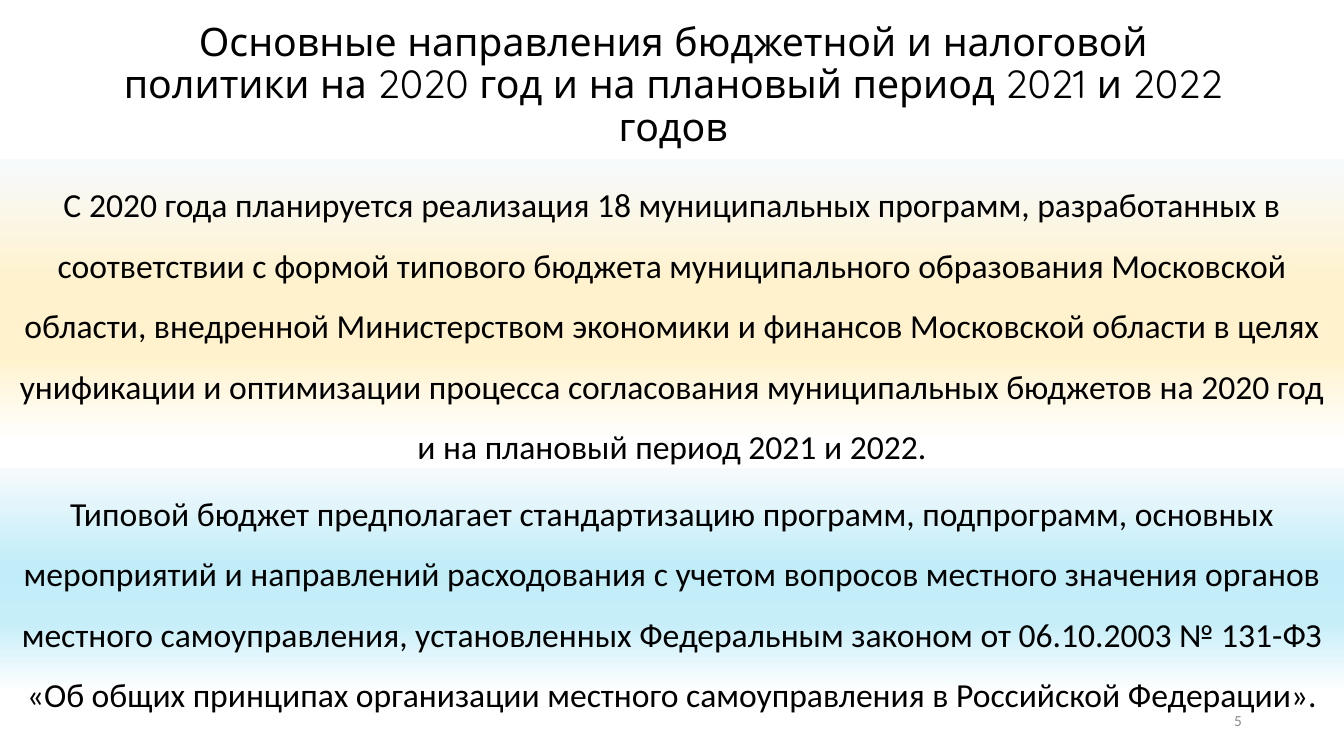
from dataclasses import dataclass

from lxml.etree import SubElement
from pptx import Presentation
from pptx.dml.color import RGBColor as Rgb
from pptx.enum.shapes import MSO_SHAPE as Shape
from pptx.enum.text import MSO_ANCHOR as Anchor, MSO_AUTO_SIZE as AutoSize, PP_ALIGN as Align
from pptx.oxml.ns import qn
from pptx.util import Pt

COLORS = {
    "text": "000000",
    "number": "8C8C8C",
    "mist": "F7FAFD",
    "cream": "FFF2CC",
    "sky": "C0EDF8",
    "light_sky": "C6EEF9",
    "white": "FFFFFF",
}
STOP_POSITIONS = (0, 40, 63, 91, 100)


@dataclass(frozen=True)
class TextStyle:
    font: str
    size: float
    color: str
    align: Align
    anchor: Anchor
    line_spacing: float = 1.0
    space_before: float = 0


@dataclass(frozen=True)
class Band:
    top: float
    height: float
    middle: tuple[str, str]
    text: str


@dataclass(frozen=True)
class Label:
    left: float
    top: float
    width: float
    height: float
    text: str
    style: TextStyle


BODY = TextStyle("Calibri", 24, "text", Align.CENTER, Anchor.TOP, 1.5, 10)
TITLE = TextStyle("Quicksand", 28, "text", Align.CENTER, Anchor.MIDDLE, 0.9)
NUMBER = TextStyle("Calibri", 11, "number", Align.RIGHT, Anchor.MIDDLE)

BANDS = (
    Band(113.76, 221, ("cream", "cream"),
         "С 2020 года планируется реализация 18 муниципальных программ, разработанных в "
         "соответствии с формой типового бюджета муниципального образования Московской "
         "области, внедренной Министерством экономики и финансов Московской области в целях "
         "унификации и оптимизации процесса согласования муниципальных бюджетов на 2020 год "
         "и на плановый период 2021 и 2022."),
    Band(334.08, 175.68, ("sky", "light_sky"),
         "Типовой бюджет предполагает стандартизацию программ, подпрограмм, основных "
         "мероприятий и направлений расходования с учетом вопросов местного значения органов "
         "местного самоуправления, установленных Федеральным законом от 06.10.2003 № 131-ФЗ "
         "«Об общих принципах организации местного самоуправления в Российской Федерации»."),
)
LABELS = (
    Label(66.96, 9.36, 828, 104.4,
          "Основные направления бюджетной и налоговой политики на 2020 год "
          "и на плановый период 2021 и 2022 годов", TITLE),
    Label(678.24, 500.4, 216, 28.8, "5", NUMBER),
)


def write_text(box, text: str, style: TextStyle) -> None:
    frame = box.text_frame
    frame.text = text
    frame.word_wrap = True
    frame.vertical_anchor = style.anchor
    para = frame.paragraphs[0]
    para.alignment = style.align
    para.line_spacing = style.line_spacing
    para.space_before = Pt(style.space_before)
    font = para.runs[0].font
    font.name = style.font
    font.size = Pt(style.size)
    font.color.rgb = Rgb.from_string(COLORS[style.color])


def fill_gradient(box, middle: tuple[str, str]) -> None:
    box.fill.gradient()
    box.fill.gradient_angle = 270
    stops = box.element.spPr.find(qn("a:gradFill")).find(qn("a:gsLst"))
    for stop in list(stops):
        stops.remove(stop)
    for position, name in zip(STOP_POSITIONS, ("mist", *middle, "white", "white")):
        stop = SubElement(stops, qn("a:gs"), pos=str(position * 1000))
        SubElement(stop, qn("a:srgbClr"), val=COLORS[name])


def draw_band(page, band: Band) -> None:
    box = page.shapes.add_shape(Shape.RECTANGLE, Pt(0), Pt(band.top), Pt(960), Pt(band.height))
    box.shadow.inherit = False
    box.line.fill.background()
    fill_gradient(box, band.middle)
    write_text(box, band.text, BODY)
    box.text_frame.auto_size = AutoSize.SHAPE_TO_FIT_TEXT


def draw_label(page, label: Label) -> None:
    box = page.shapes.add_textbox(Pt(label.left), Pt(label.top), Pt(label.width), Pt(label.height))
    write_text(box, label.text, label.style)


def main() -> None:
    deck = Presentation()
    deck.slide_width, deck.slide_height = Pt(960), Pt(540)
    page = deck.slides.add_slide(deck.slide_layouts[6])
    for band in BANDS:
        draw_band(page, band)
    for label in LABELS:
        draw_label(page, label)
    deck.save("out.pptx")


if __name__ == "__main__":
    main()
